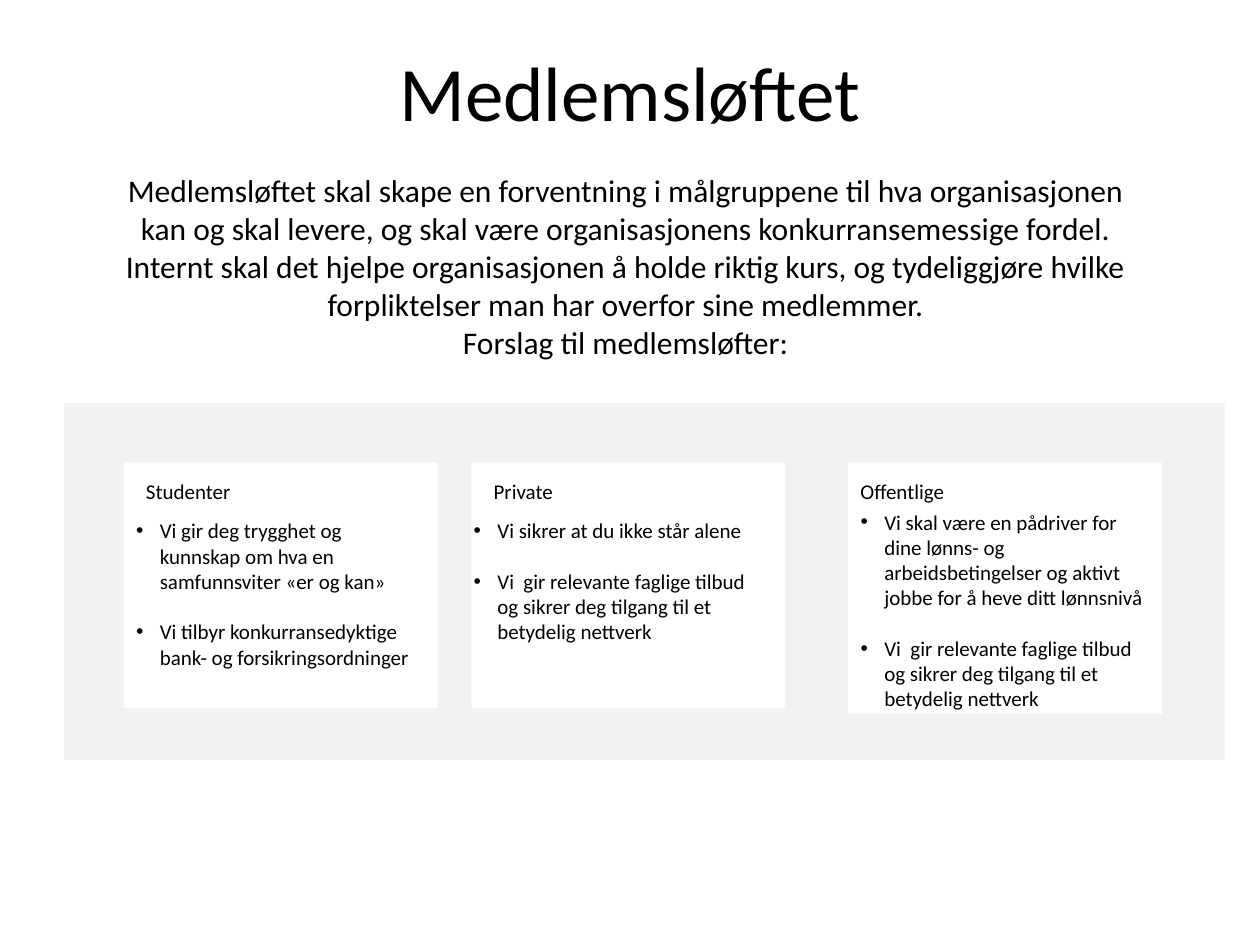
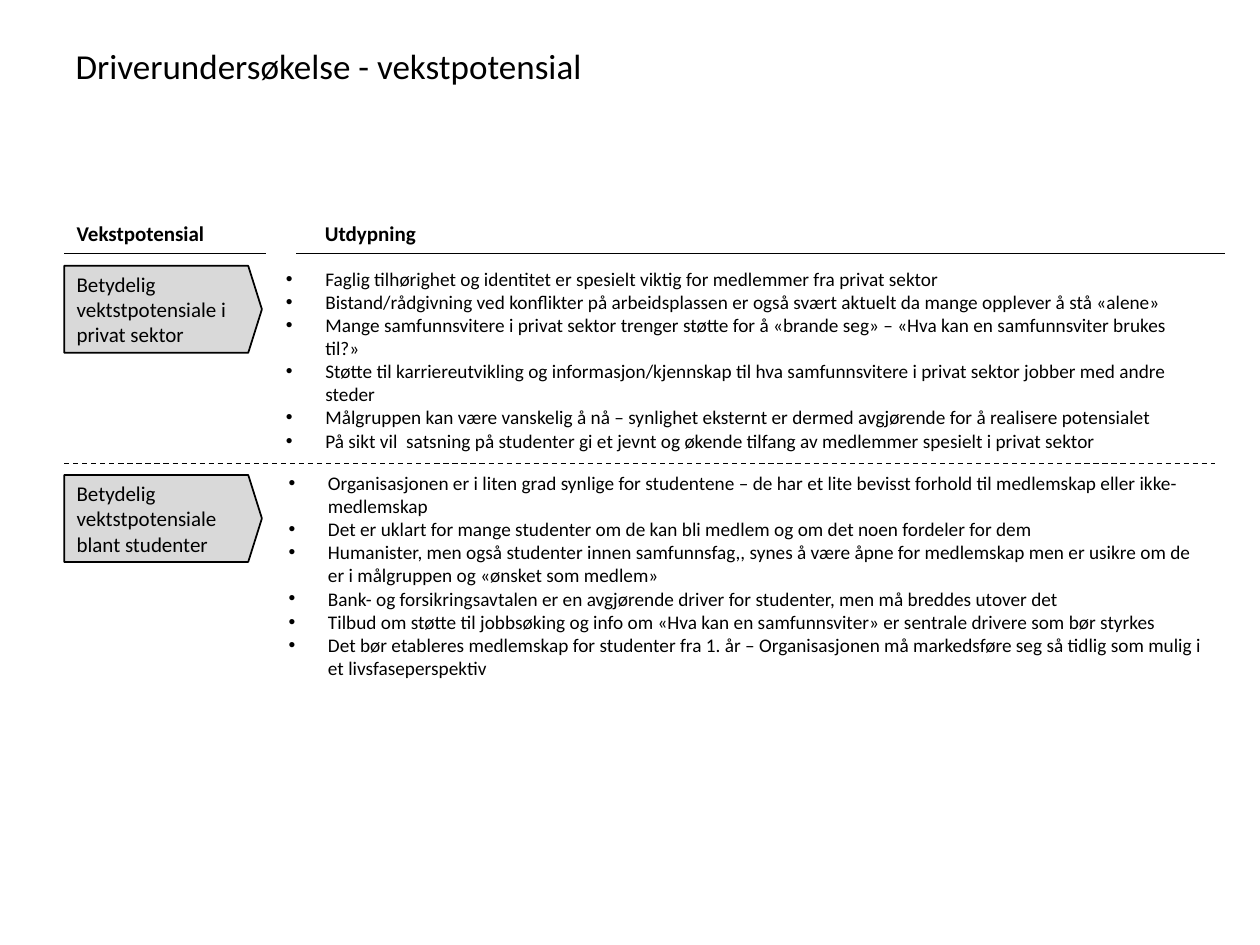
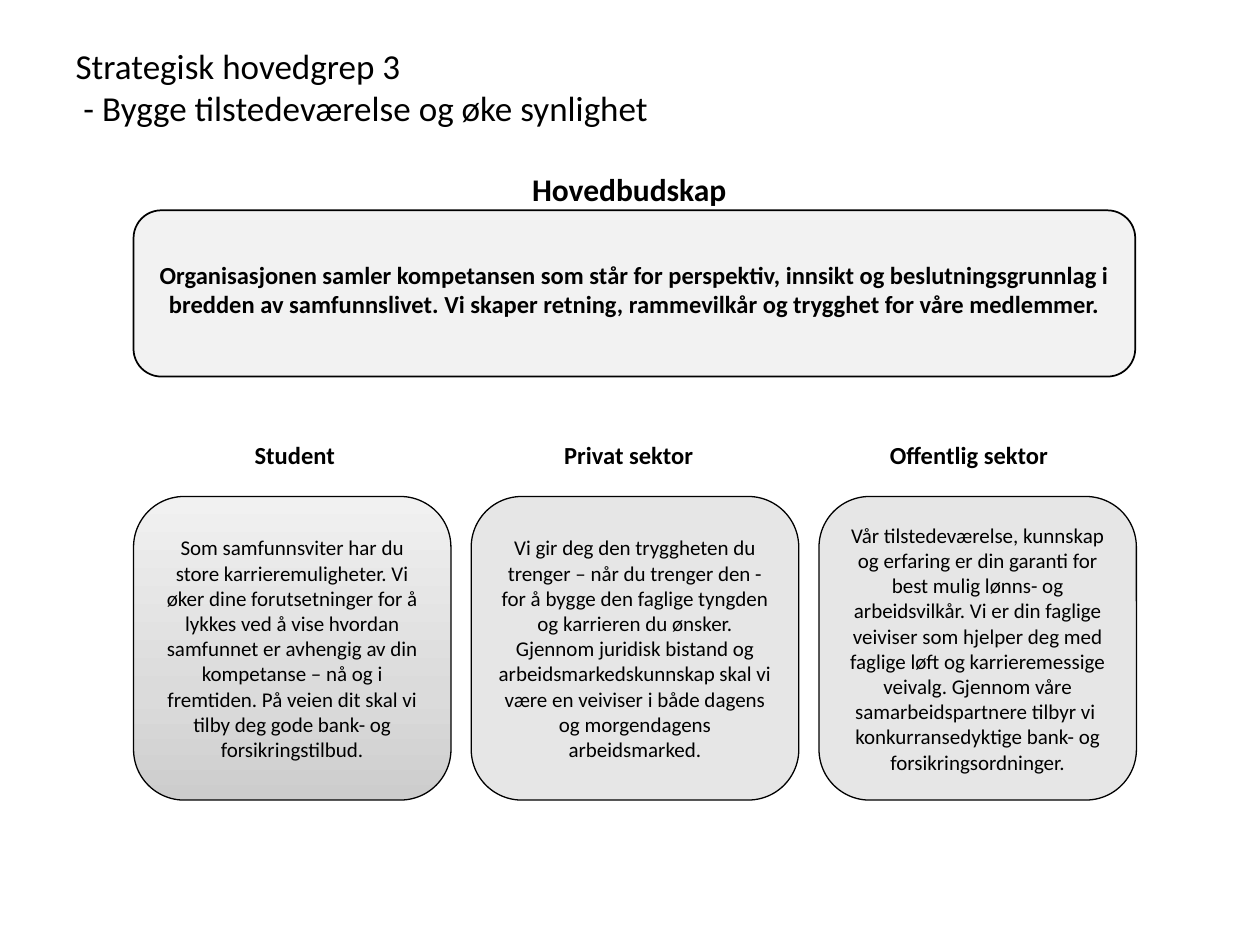
from lxml.etree import SubElement
from pptx import Presentation
from pptx.dml.color import RGBColor
from pptx.enum.dml import MSO_LINE
from pptx.enum.shapes import MSO_CONNECTOR, MSO_SHAPE
from pptx.enum.text import MSO_ANCHOR, MSO_AUTO_SIZE, PP_ALIGN
from pptx.oxml.ns import qn
from pptx.util import Pt

FONT = "Calibri"
BLACK = RGBColor(0x00, 0x00, 0x00)
WHITE = RGBColor(0xFF, 0xFF, 0xFF)
PALE = RGBColor(0xF2, 0xF2, 0xF2)
SILVER = RGBColor(0xE6, 0xE6, 0xE6)
GREY = RGBColor(0xD9, 0xD9, 0xD9)
FADE = [(0, "CDCDCD"), (35, "DBDBDB"), (100, "F1F1F1")]
LEFT, CENTER = PP_ALIGN.LEFT, PP_ALIGN.CENTER
EDGE = 36.7

PROMISES = [
    ("Studenter", 70.6, 140.4, 76.3, 70.6, 292.3, [
        "Vi gir deg trygghet og kunnskap om hva en samfunnsviter «er og kan»",
        "Vi tilbyr konkurransedyktige bank- og forsikringsordninger"]),
    ("Private", 269.3, 140.4, 275, 263.5, 292.3, [
        "Vi sikrer at du ikke står alene",
        "Vi  gir relevante faglige tilbud og sikrer deg tilgang til et betydelig nettverk"]),
    ("Offentlige", 484.6, 144, 484.6, 484.6, 287.3, [
        "Vi skal være en pådriver for dine lønns- og arbeidsbetingelser og aktivt jobbe for å heve ditt lønnsnivå",
        "Vi  gir relevante faglige tilbud og sikrer deg tilgang til et betydelig nettverk"]),
]

INTRO = [
    "Medlemsløftet skal skape en forventning i målgruppene til hva organisasjonen kan og skal levere, "
    "og skal være organisasjonens konkurransemessige fordel. Internt skal det hjelpe organisasjonen å "
    "holde riktig kurs, og tydeliggjøre hvilke forpliktelser man har overfor sine medlemmer.",
    "Forslag til medlemsløfter:",
]

DRIVERS = [
    ("Betydelig vektstpotensiale i privat sektor", 151.9, (156.2, 149, 538.6, 113.8), [
        "Faglig tilhørighet og identitet er spesielt viktig for medlemmer fra privat sektor",
        "Bistand/rådgivning ved konflikter på arbeidsplassen er også svært aktuelt da mange opplever å stå «alene»",
        "Mange samfunnsvitere i privat sektor trenger støtte for å «brande seg» – «Hva kan en samfunnsviter brukes til?»",
        "Støtte til karriereutvikling og informasjon/kjennskap til hva samfunnsvitere i privat sektor jobber med andre steder",
        "Målgruppen kan være vanskelig å nå – synlighet eksternt er dermed avgjørende for å realisere potensialet",
        "På sikt vil  satsning på studenter gi et jevnt og økende tilfang av medlemmer spesielt i privat sektor"]),
    ("Betydelig vektstpotensiale blant studenter", 271.4, (157.7, 265.7, 537.1, 127.4), [
        "Organisasjonen er i liten grad synlige for studentene – de har et lite bevisst forhold til medlemskap eller ikke-medlemskap",
        "Det er uklart for mange studenter om de kan bli medlem og om det noen fordeler for dem",
        "Humanister, men også studenter innen samfunnsfag,, synes å være åpne for medlemskap men er usikre om de er i målgruppen og «ønsket som medlem»",
        "Bank- og forsikringsavtalen er en avgjørende driver for studenter, men må breddes utover det",
        "Tilbud om støtte til jobbsøking og info om «Hva kan en samfunnsviter» er sentrale drivere som bør styrkes",
        "Det bør etableres medlemskap for studenter fra 1. år – Organisasjonen må markedsføre seg så tidlig som mulig i et livsfaseperspektiv"]),
]

MESSAGE = (
    "Organisasjonen samler kompetansen som står for perspektiv, innsikt og beslutningsgrunnlag i bredden "
    "av samfunnslivet. Vi skaper retning, rammevilkår og trygghet for våre medlemmer.")

SECTORS = [
    ("Student", 110.9, 76.3, 181.4,
     "Som samfunnsviter har du store karrieremuligheter. Vi øker dine forutsetninger for å lykkes ved å vise "
     "hvordan samfunnet er avhengig av din kompetanse – nå og i fremtiden. På veien dit skal vi tilby deg gode "
     "bank- og forsikringstilbud."),
    ("Privat sektor", 301.7, 269.3, 187.2,
     "Vi gir deg den tryggheten du trenger – når du trenger den - for å bygge den faglige tyngden og karrieren "
     "du ønsker. Gjennom juridisk bistand og arbeidsmarkedskunnskap skal vi være en veiviser i både dagens og "
     "morgendagens arbeidsmarked."),
    ("Offentlig sektor", 496.1, 468, 181.4,
     "Vår tilstedeværelse, kunnskap og erfaring er din garanti for best mulig lønns- og arbeidsvilkår. Vi er din "
     "faglige veiviser som hjelper deg med faglige løft og karrieremessige veivalg. Gjennom våre "
     "samarbeidspartnere tilbyr vi  konkurransedyktige bank- og forsikringsordninger."),
]


def place(shape, box):
    shape.left, shape.top, shape.width, shape.height = map(Pt, box)


def mark(para, inset):
    props = para._p.get_or_add_pPr()
    props.set("marL", str(Pt(inset)))
    props.set("indent", str(-Pt(inset)))
    SubElement(props, qn("a:buFont")).set("typeface", "Arial")
    SubElement(props, qn("a:buChar")).set("char", "•")


def write(shape, lines, size, bold=False, align=LEFT, anchor=MSO_ANCHOR.TOP, inset=0, gap=0):
    frame = shape.text_frame
    frame.word_wrap = True
    frame.auto_size = MSO_AUTO_SIZE.NONE
    frame.vertical_anchor = anchor
    for i, line in enumerate(lines):
        para = frame.add_paragraph() if i else frame.paragraphs[0]
        if inset:
            mark(para, inset)
        para.alignment = align
        para.space_before = Pt(gap if i else 0)
        run = para.add_run()
        run.text = line
        font = run.font
        font.name, font.size, font.bold = FONT, Pt(size), bold
        font.color.rgb = BLACK


def add_title(slide, lines, size=20, align=LEFT, high=43.9):
    title = slide.shapes.title
    place(title, (36, 21.6, 648, high))
    write(title, lines, size, align=align)


def add_list(slide, idx, box, lines, size, **style):
    body = slide.placeholders[idx]
    place(body, box)
    write(body, lines, size, **style)
    body.element.getparent().append(body.element)


def add_label(slide, box, text, size=12, **style):
    label = slide.shapes.add_textbox(*map(Pt, box))
    write(label, [text], size, **style)


def add_box(slide, kind, box, fill, line=0):
    shape = slide.shapes.add_shape(kind, *map(Pt, box))
    shape.shadow.inherit = False
    shape.fill.solid()
    shape.fill.fore_color.rgb = fill
    if line:
        shape.line.color.rgb = BLACK
        shape.line.width = Pt(line)
    else:
        shape.line.fill.background()
    return shape


def add_fade(shape):
    shape.fill.gradient()
    shape.fill.gradient_angle = 90
    stops = shape.element.find(".//" + qn("a:gsLst"))
    stops.clear()
    for pos, tone in FADE:
        stop = SubElement(stops, qn("a:gs"))
        stop.set("pos", str(pos * 1000))
        SubElement(stop, qn("a:srgbClr")).set("val", tone)


def add_rule(slide, start, end, y, dash=None):
    rule = slide.shapes.add_connector(MSO_CONNECTOR.STRAIGHT, Pt(start), Pt(y), Pt(end), Pt(y))
    rule.line.color.rgb = BLACK
    rule.line.width = Pt(0.75)
    if dash:
        rule.line.dash_style = dash
    SubElement(rule.element.spPr, qn("a:effectLst"))


def build_pledge(slide):
    add_title(slide, ["Medlemsløftet"], 44, CENTER)
    add_box(slide, MSO_SHAPE.RECTANGLE, (EDGE, 230.4, 663.1, 203.8), PALE)
    add_list(slide, 1, (59.8, 94.3, 595.4, 116.6), INTRO, 18, align=CENTER)
    for idx, (head, x, high, head_x, list_x, list_y, lines) in enumerate(PROMISES, 2):
        add_box(slide, MSO_SHAPE.RECTANGLE, (x, 264.2, 179.3, high), WHITE)
        add_label(slide, (head_x, 270, 128.2, 21.6), head)
        add_list(slide, idx, (list_x, list_y, 178.5, 110), lines, 12, inset=13.5, gap=14.6)


def build_growth(slide):
    add_title(slide, ["Driverundersøkelse - vekstpotensial"])
    for head, x, start, end in [("Vekstpotensial", EDGE, EDGE, 151.9), ("Utdypning", 178.6, 169.2, 699.8)]:
        add_label(slide, (x, 122.4, 118.8, 21.6), head, bold=True)
        add_rule(slide, start, end, 144.7)
    add_rule(slide, EDGE, 694.1, 265, MSO_LINE.DASH)
    for idx, (name, y, box, lines) in enumerate(DRIVERS, 1):
        arrow = add_box(slide, MSO_SHAPE.PENTAGON, (EDGE, y, 113, 49.7), GREY, 1)
        arrow.adjustments[0] = 0.157
        write(arrow, [name], 12, anchor=MSO_ANCHOR.MIDDLE)
        add_list(slide, idx, box, lines, 11, inset=22.5)


def build_message(slide):
    add_title(slide, ["Strategisk hovedgrep 3", "- Bygge tilstedeværelse og øke synlighet"], high=55.4)
    dash = slide.shapes.title.text_frame.paragraphs[1]
    dash._p.get_or_add_pPr().set("marL", str(Pt(4.5)))
    add_label(slide, (285.8, 93.6, 147.6, 28.8), "Hovedbudskap", 18, bold=True, align=CENTER)
    main_box = add_box(slide, MSO_SHAPE.ROUNDED_RECTANGLE, (76.3, 120.2, 572.4, 95), PALE, 1)
    write(main_box, [MESSAGE], 14, bold=True, align=CENTER, anchor=MSO_ANCHOR.MIDDLE)
    main_box.text_frame.margin_bottom = Pt(8.4)
    for i, (head, head_x, x, wide, text) in enumerate(SECTORS):
        add_label(slide, (head_x, 247.7, 115.2, 24.5), head, 14, bold=True, align=CENTER)
        card = add_box(slide, MSO_SHAPE.ROUNDED_RECTANGLE, (x, 283.7, wide, 173.5), SILVER, 0.75)
        if i == 0:
            add_fade(card)
        write(card, [text], 12, align=CENTER, anchor=MSO_ANCHOR.MIDDLE)


def main():
    deck = Presentation()
    deck.slide_width, deck.slide_height = Pt(720), Pt(540)
    for layout, build in [(4, build_pledge), (3, build_growth), (5, build_message)]:
        build(deck.slides.add_slide(deck.slide_layouts[layout]))
    deck.save("out.pptx")


if __name__ == "__main__":
    main()
